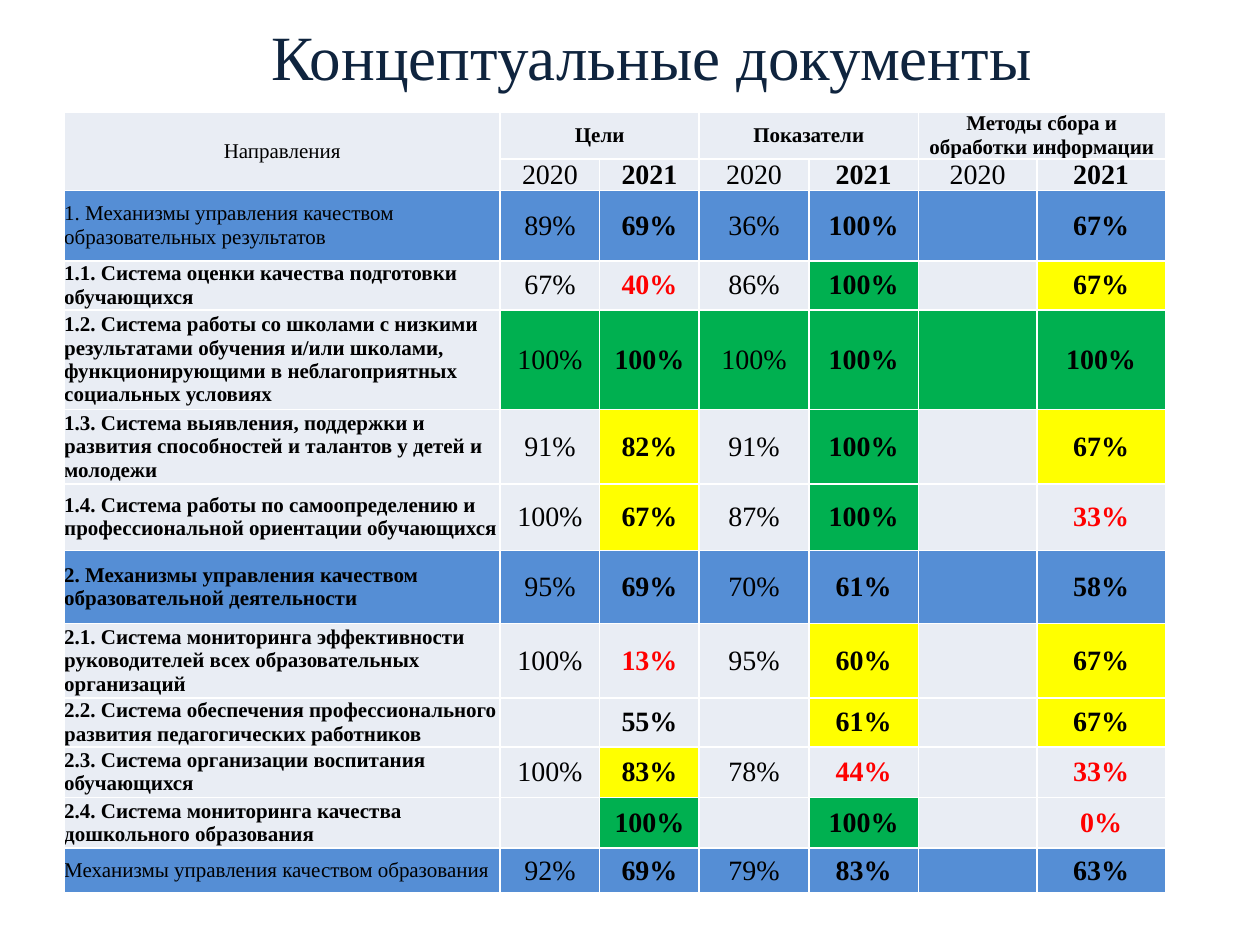
from dataclasses import dataclass

from lxml.etree import SubElement
from pptx import Presentation
from pptx.dml.color import RGBColor
from pptx.enum.text import MSO_ANCHOR as Anchor, PP_ALIGN as Align
from pptx.oxml.ns import qn
from pptx.util import Inches, Pt

FONT = "Times New Roman"
BLACK, WHITE, NAVY, RED = "000000", "FFFFFF", "0F243E", "FF0000"
PALE, BLUE, GREEN, YELLOW = "E9EDF4", "558ED5", "00B050", "FFFF00"

COLUMN_WIDTHS = [3.46, 0.79, 0.79, 0.87, 0.87, 0.94, 1.02]
HEADER_HEIGHTS = [0.37, 0.25]
GROUPS = ["Цели", "Показатели", "Методы сбора и обработки информации"]


@dataclass
class Direction:
    """A table row: marks hold a letter per value, g green, y yellow, r red text."""
    name: str
    height: float
    values: list[str]
    marks: str = "------"
    fill: str = PALE
    bold: bool = True


DIRECTIONS = [
    Direction("1. Механизмы управления качеством образовательных результатов", 0.56,
              ["89%", "69%", "36%", "100%", "", "67%"], fill=BLUE, bold=False),
    Direction("1.1. Система оценки качества подготовки обучающихся", 0.39,
              ["67%", "40%", "86%", "100%", "", "67%"], "-r-g-y"),
    Direction("1.2. Система работы со школами с низкими результатами обучения и/или "
              "школами, функционирующими в неблагоприятных социальных условиях", 0.79,
              ["100%", "100%", "100%", "100%", "", "100%"], "gggggg"),
    Direction("1.3. Система выявления, поддержки и развития способностей и талантов "
              "у детей и молодежи", 0.59,
              ["91%", "82%", "91%", "100%", "", "67%"], "-y-g-y"),
    Direction("1.4. Система работы по самоопределению и профессиональной ориентации "
              "обучающихся", 0.53,
              ["100%", "67%", "87%", "100%", "", "33%"], "-y-g-r"),
    Direction("2. Механизмы управления качеством образовательной деятельности", 0.58,
              ["95%", "69%", "70%", "61%", "", "58%"], fill=BLUE),
    Direction("2.1. Система мониторинга эффективности руководителей всех "
              "образовательных организаций", 0.59,
              ["100%", "13%", "95%", "60%", "", "67%"], "-r-y-y"),
    Direction("2.2. Система обеспечения профессионального развития педагогических "
              "работников", 0.39,
              ["", "55%", "", "61%", "", "67%"], "---y-y"),
    Direction("2.3. Система организации воспитания обучающихся", 0.4,
              ["100%", "83%", "78%", "44%", "", "33%"], "-y-r-r"),
    Direction("2.4. Система мониторинга качества дошкольного образования", 0.4,
              ["", "100%", "", "100%", "", "0%"], "-g-g-r"),
    Direction("Механизмы управления качеством образования", 0.36,
              ["92%", "69%", "79%", "83%", "", "63%"], fill=BLUE, bold=False),
]


def color(value: str) -> RGBColor:
    return RGBColor.from_string(value)


def write(para, text: str, size: float, tint: str = BLACK, bold: bool = False,
          align=Align.CENTER) -> None:
    para.alignment = align
    if not text:
        return
    span = para.add_run()
    span.text = text
    for name, value in {"name": FONT, "size": Pt(size), "bold": bold}.items():
        setattr(span.font, name, value)
    span.font.color.rgb = color(tint)


def style_cell(cell, fill: str) -> None:
    """Clear the margins, draw white 1 pt borders and fill the cell."""
    for side in ("left", "top", "right", "bottom"):
        setattr(cell, f"margin_{side}", 0)
    cell.vertical_anchor = Anchor.MIDDLE
    properties = cell._tc.get_or_add_tcPr()
    for tag in ("a:lnL", "a:lnR", "a:lnT", "a:lnB"):
        line = SubElement(properties, qn(tag), w=str(Pt(1)))
        SubElement(SubElement(line, qn("a:solidFill")), qn("a:srgbClr"), val=WHITE)
    cell.fill.solid()
    cell.fill.fore_color.rgb = color(fill)


def fill_cell(cell, text: str, fill: str = PALE, size: float = 16, **text_format) -> None:
    style_cell(cell, fill)
    write(cell.text_frame.paragraphs[0], text, size, **text_format)


def draw_header(table) -> None:
    fill_cell(table.cell(0, 0), "Направления", size=12)
    style_cell(table.cell(1, 0), PALE)
    table.cell(0, 0).merge(table.cell(1, 0))
    for index, group in enumerate(GROUPS):
        first = 1 + 2 * index
        fill_cell(table.cell(0, first), group, size=12, bold=True)
        style_cell(table.cell(0, first + 1), PALE)
        table.cell(0, first).merge(table.cell(0, first + 1))
        fill_cell(table.cell(1, first), "2020")
        fill_cell(table.cell(1, first + 1), "2021", bold=True)


def draw_direction(table, row: int, direction: Direction) -> None:
    fill_cell(table.cell(row, 0), direction.name, direction.fill, 12,
              bold=direction.bold, align=Align.LEFT)
    for column, (value, mark) in enumerate(zip(direction.values, direction.marks), 1):
        fill = {"g": GREEN, "y": YELLOW}.get(mark, direction.fill)
        fill_cell(table.cell(row, column), value, fill,
                  tint=RED if mark == "r" else BLACK, bold=column % 2 == 0)


def draw_title(title) -> None:
    box = {"left": 0.67, "top": 0, "width": 9, "height": 0.87}
    for name, value in box.items():
        setattr(title, name, Inches(value))
    title.text_frame.vertical_anchor = Anchor.MIDDLE
    write(title.text_frame.paragraphs[0], "Концептуальные документы", 36, NAVY)


def draw_table(page) -> None:
    heights = HEADER_HEIGHTS + [direction.height for direction in DIRECTIONS]
    table = page.shapes.add_table(
        len(heights), len(COLUMN_WIDTHS), Inches(0.51), Inches(0.89),
        Inches(sum(COLUMN_WIDTHS)), Inches(sum(heights))).table
    table.first_row = table.horz_banding = False
    for column, width in zip(table.columns, COLUMN_WIDTHS):
        column.width = Inches(width)
    for row, height in zip(table.rows, heights):
        row.height = Inches(height)
    draw_header(table)
    for row, direction in enumerate(DIRECTIONS, len(HEADER_HEIGHTS)):
        draw_direction(table, row, direction)


def main() -> None:
    deck = Presentation()
    deck.slide_width, deck.slide_height = Inches(10), Inches(7.5)
    page = deck.slides.add_slide(deck.slide_layouts.get_by_name("Title Only"))
    draw_title(page.shapes.title)
    draw_table(page)
    deck.save("out.pptx")


if __name__ == "__main__":
    main()
